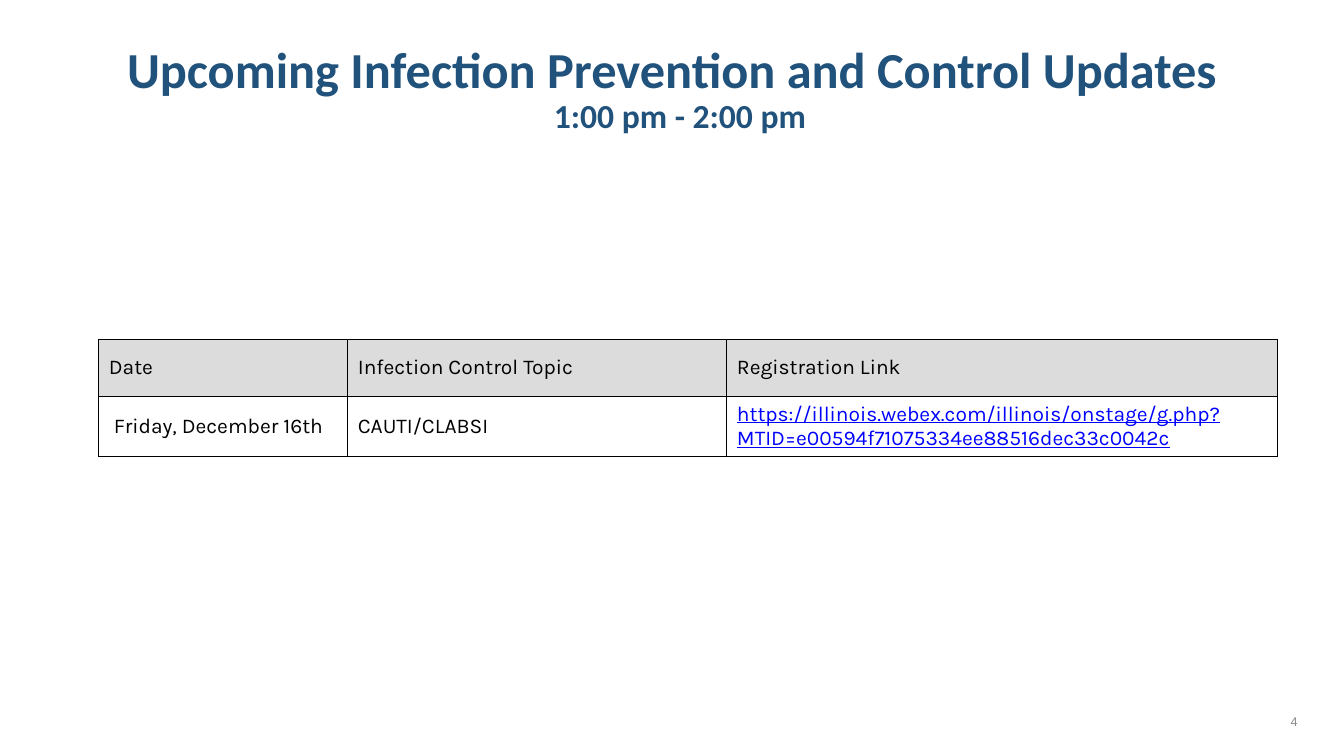
from dataclasses import dataclass
from typing import Any, NamedTuple

from lxml.etree import SubElement
from pptx import Presentation
from pptx.dml.color import RGBColor
from pptx.enum.text import MSO_ANCHOR as Anchor, MSO_AUTO_SIZE as AutoSize, PP_ALIGN as Align
from pptx.oxml.ns import qn
from pptx.util import Pt

EMU_PER_PX = 9144
TITLE_ONLY = 5


@dataclass(frozen=True)
class Theme:
    navy: str = "20527C"
    black: str = "000000"
    white: str = "FFFFFF"
    header_fill: str = "DCDCDC"
    link: str = "0000FF"
    grey: str = "888888"
    title_size: int = 36
    time_size: int = 24
    table_size: int = 15
    number_size: int = 9
    border: int = 1
    title_font: str = "Calibri"
    table_font: str = "Karla"
    number_font: str = "Arial"


class Area(NamedTuple):
    left: int
    top: int
    width: int
    height: int


class Line(NamedTuple):
    text: str
    font: str
    size: int
    color: str
    align: Align = Align.LEFT
    bold: bool = False
    underline: bool = False
    spacing: float = 1.0


THEME = Theme()
TITLE_AREA = Area(116, 40, 1117, 101)
TABLE_AREA = Area(98, 337, 1169, 113)
NUMBER_AREA = Area(1267, 703, 25, 25)
COLUMNS = (247, 376, 546)
ROWS = (56, 57)
CELLS = (
    ("Date", "Infection Control Topic", "Registration Link"),
    (
        " Friday, December 16th",
        "CAUTI/CLABSI",
        "https://illinois.webex.com/illinois/onstage/g.php?MTID=e00594f71075334ee88516dec33c0042c",
    ),
)
TITLE_LINES = (
    Line("Upcoming Infection Prevention and Control Updates", THEME.title_font,
         THEME.title_size, THEME.navy, bold=True, spacing=0.9),
    Line("1:00 pm - 2:00 pm", THEME.title_font, THEME.time_size, THEME.navy,
         Align.CENTER, bold=True, spacing=0.9),
)
NUMBER_LINE = Line("4", THEME.number_font, THEME.number_size, THEME.grey, Align.RIGHT)


def px(length: int) -> int:
    return length * EMU_PER_PX


def apply(target: Any, formats: dict[str, Any]) -> None:
    for name, value in formats.items():
        setattr(target, name, value)


def place(shape: Any, area: Area) -> None:
    apply(shape, {name: px(value) for name, value in area._asdict().items()})


def write(frame: Any, lines: tuple[Line, ...]) -> None:
    for index, line in enumerate(lines):
        para = frame.add_paragraph() if index else frame.paragraphs[0]
        apply(para, {"alignment": line.align, "line_spacing": line.spacing})
        span = para.add_run()
        span.text = line.text
        apply(span.font, {"name": line.font, "size": Pt(line.size),
                          "bold": line.bold, "underline": line.underline})
        span.font.color.rgb = RGBColor.from_string(line.color)


def draw_borders(cell: Any) -> None:
    properties = cell._tc.get_or_add_tcPr()
    for side in ("a:lnL", "a:lnR", "a:lnT", "a:lnB"):
        border = SubElement(properties, qn(side), w=str(Pt(THEME.border)))
        fill = SubElement(border, qn("a:solidFill"))
        SubElement(fill, qn("a:srgbClr"), val=THEME.black)


def draw_title(page: Any) -> None:
    title = page.shapes.title
    place(title, TITLE_AREA)
    apply(title.text_frame, {"word_wrap": True, "vertical_anchor": Anchor.TOP,
                             "auto_size": AutoSize.SHAPE_TO_FIT_TEXT})
    write(title.text_frame, TITLE_LINES)


def draw_table(page: Any) -> None:
    area = Area(*map(px, TABLE_AREA))
    table = page.shapes.add_table(len(ROWS), len(COLUMNS), *area).table
    apply(table, {"first_row": False, "horz_banding": False})
    for column, width in zip(table.columns, COLUMNS):
        column.width = px(width)
    for row, height in zip(table.rows, ROWS):
        row.height = px(height)
    for row_index, texts in enumerate(CELLS):
        for column_index, text in enumerate(texts):
            cell = table.cell(row_index, column_index)
            is_link = text.startswith("https://")
            cell.vertical_anchor = Anchor.MIDDLE
            draw_borders(cell)
            cell.fill.solid()
            fill = THEME.white if row_index else THEME.header_fill
            cell.fill.fore_color.rgb = RGBColor.from_string(fill)
            color = THEME.link if is_link else THEME.black
            write(cell.text_frame, (Line(text, THEME.table_font, THEME.table_size,
                                         color, underline=is_link),))


def draw_number(page: Any) -> None:
    box = page.shapes.add_textbox(*map(px, NUMBER_AREA))
    margins = dict.fromkeys(("margin_left", "margin_top", "margin_right", "margin_bottom"), px(5))
    apply(box.text_frame, {**margins, "word_wrap": False, "vertical_anchor": Anchor.MIDDLE,
                           "auto_size": AutoSize.SHAPE_TO_FIT_TEXT})
    write(box.text_frame, (NUMBER_LINE,))


def main() -> None:
    deck = Presentation()
    apply(deck, {"slide_width": px(1333), "slide_height": px(750)})
    page = deck.slides.add_slide(deck.slide_layouts[TITLE_ONLY])
    draw_title(page)
    draw_table(page)
    draw_number(page)
    deck.save("out.pptx")


if __name__ == "__main__":
    main()
